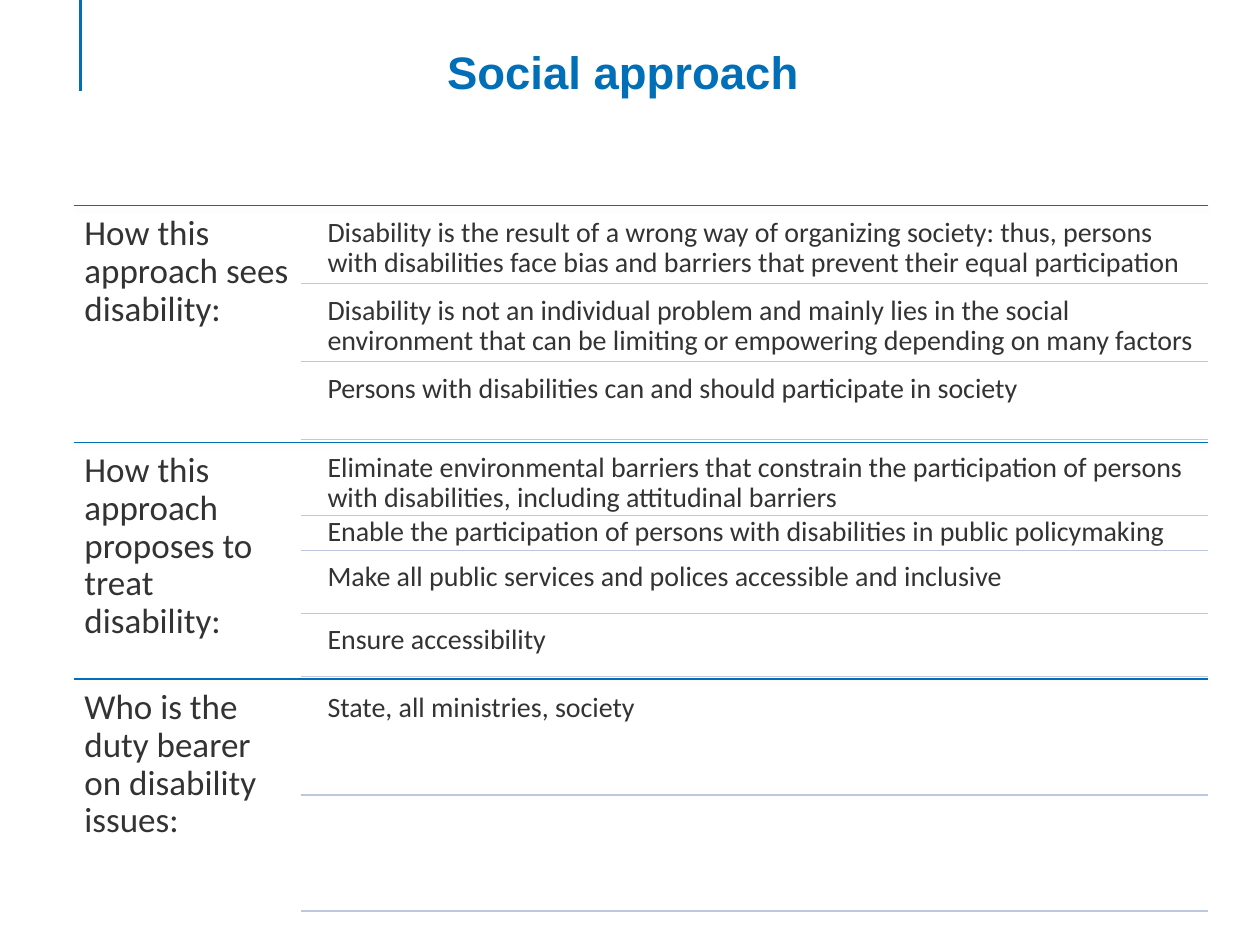
from lxml import etree
from pptx import Presentation, util as u
from pptx.dml.color import RGBColor
from pptx.enum import shapes, text
from pptx.oxml.ns import qn

BLUE = RGBColor(0x00, 0x6F, 0xB7)
PALE = RGBColor(0xBD, 0xC8, 0xDF)
DARK = RGBColor(0x33, 0x33, 0x33)

TITLE = "Social approach"
# Question, then its answers: (words, row height, gap above the words)
GROUPS = [
    ("How this approach sees disability:", [
        ("Disability is the result of a wrong way of organizing society: thus, "
         "persons with disabilities face bias and barriers that prevent their "
         "equal participation", 0.62, 0.03),
        ("Disability is not an individual problem and mainly lies in the social "
         "environment that can be limiting or empowering depending on many "
         "factors", 0.62, 0.03),
        ("Persons with disabilities can and should participate in society",
         0.62, 0.03),
    ]),
    ("How this approach proposes to treat disability:", [
        ("Eliminate environmental barriers that constrain the participation of "
         "persons with disabilities, including attitudinal barriers", 0.58, 0.02),
        ("Enable the participation of persons with disabilities in public "
         "policymaking", 0.28, -0.05),
        ("Make all public services and polices accessible and inclusive",
         0.5, 0.02),
        ("Ensure accessibility", 0.5, 0.02),
    ]),
    ("Who is the duty bearer on disability issues:", [
        ("State, all ministries, society", 0.92, 0.04),
        ("", 0.92, 0),
    ]),
]

# Grid: question column, answer column, three equal bands
LEFT, SPLIT, INDENT, RIGHT = 0.59, 2.39, 2.53, 9.59
TOP, BAND = 1.63, 1.88


def draw_line(x1, y1, x2, y2, color, width, shade=0):
    line = slide.shapes.add_connector(
        shapes.MSO_CONNECTOR.STRAIGHT, *map(u.Inches, (x1, y1, x2, y2)))
    line.line.color.rgb = color
    line.line.width = u.Pt(width)
    fx = etree.SubElement(line._element.spPr, qn("a:effectLst"))
    if shade:
        cast = etree.SubElement(
            fx, qn("a:outerShdw"), blurRad=str(u.Pt(3.1)), dist=str(u.Pt(1.7)),
            dir="5400000", rotWithShape="0")
        black = etree.SubElement(cast, qn("a:srgbClr"), val="000000")
        etree.SubElement(black, qn("a:alpha"), val=str(shade * 1000))


def add_run(para, words, font, size, color, bold=False):
    run = para.add_run()
    run.text = words
    run.font.name, run.font.size, run.font.bold = font, u.Pt(size), bold
    run.font.color.rgb = color


def add_label(words, x, y, w, h, size, inset):
    box = slide.shapes.add_textbox(*map(u.Inches, (x, y, w, h)))
    frame = box.text_frame
    frame.word_wrap = True
    frame.margin_left = frame.margin_right = u.Inches(inset)
    frame.margin_top = frame.margin_bottom = u.Inches(inset)
    para = frame.paragraphs[0]
    para.line_spacing = 0.9
    add_run(para, words, "Calibri", size, DARK)


deck = Presentation()
deck.slide_width, deck.slide_height = u.Inches(10), u.Inches(7.5)
slide = deck.slides.add_slide(deck.slide_layouts[5])

# Accent bar and title
draw_line(0.64, 0, 0.64, 0.72, BLUE, 2)
head = slide.shapes.title
head.left, head.top, head.width, head.height = map(
    u.Inches, (0.81, 0.3, 8.27, 1.19))
head.text_frame.vertical_anchor = text.MSO_ANCHOR.TOP
para = head.text_frame.paragraphs[0]
para.alignment = text.PP_ALIGN.CENTER
add_run(para, TITLE, "Arial", 26, BLUE, True)

# Bands of questions and answers
for i, (ask, rows) in enumerate(GROUPS):
    y = TOP + i * BAND
    draw_line(LEFT, y, RIGHT, y, BLUE, 0.75, 35)
    add_label(ask, LEFT, y, SPLIT - LEFT, BAND, 20, 0.08)
    for words, high, gap in rows:
        if words:
            add_label(words, INDENT, y + gap, RIGHT - INDENT, high - gap, 16, 0.07)
        y += high
        draw_line(SPLIT, y, RIGHT, y, PALE, 0.75, 38)

deck.save("out.pptx")
